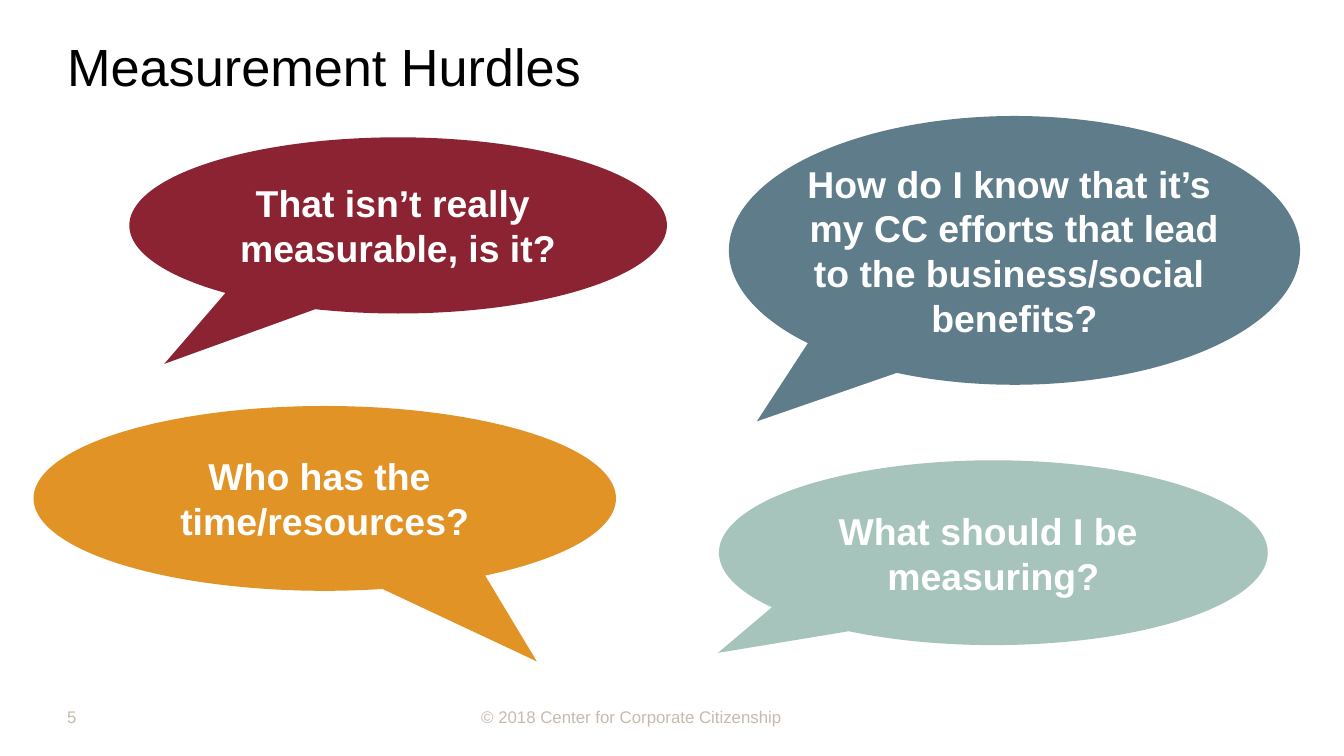
from pptx import Presentation
from pptx.dml.color import RGBColor
from pptx.enum.shapes import MSO_SHAPE
from pptx.enum.text import MSO_ANCHOR, MSO_AUTO_SIZE, PP_ALIGN
from pptx.util import Pt


def color(hex_value):
    return RGBColor.from_string(hex_value)


def write_text(shape, lines, alignment, hex_value, font_format, frame_format):
    text_frame = shape.text_frame
    for name, value in frame_format.items():
        setattr(text_frame, name, value)
    text_frame.text = "\n".join(lines)
    for paragraph in text_frame.paragraphs:
        paragraph.alignment = alignment
        for name, value in font_format.items():
            setattr(paragraph.font, name, value)
        paragraph.font.color.rgb = color(hex_value)


presentation = Presentation()
presentation.slide_width = Pt(720)
presentation.slide_height = Pt(405)
slide = presentation.slides.add_slide(presentation.slide_layouts[5])

plain_frame = {
    "margin_left": 0, "margin_top": 0, "margin_right": 0, "margin_bottom": 0,
    "vertical_anchor": MSO_ANCHOR.MIDDLE,
    "auto_size": MSO_AUTO_SIZE.NONE,
    "word_wrap": True,
}
bubble_frame = {
    "vertical_anchor": MSO_ANCHOR.MIDDLE,
    "auto_size": MSO_AUTO_SIZE.NONE,
    "word_wrap": False,
}
title_font = {"name": "Arial", "size": Pt(28), "bold": False}
footer_font = {"name": "Arial", "size": Pt(9)}
bubble_font = {"name": "Arial", "size": Pt(20), "bold": True}

# Title
title = slide.shapes.title
title.left, title.top, title.width, title.height = Pt(36), Pt(5.8), Pt(684), Pt(58.3)
write_text(title, ["Measurement Hurdles"], PP_ALIGN.LEFT, "000000",
           title_font, plain_frame)

# Footer: copyright line and slide number
for left, width, text in [
    (257.8, 164.2, "© 2018 Center for Corporate Citizenship"),
    (36, 167.8, "5"),
]:
    footer = slide.shapes.add_textbox(Pt(left), Pt(373), Pt(width), Pt(21.6))
    write_text(footer, [text], PP_ALIGN.LEFT, "C6BBAE", footer_font, plain_frame)

# Speech bubbles: position and size, tail tip, fill, lines
bubbles = [
    ((69.3, 73.6, 288, 94.4), (-0.435, 0.786), "8C2332",
     ["That isn’t really ", "measurable, is it?"]),
    ((390.5, 62.2, 306, 144), (-0.451, 0.636), "5E7C8A",
     ["How do I know that it’s ", "my CC efforts that lead",
      "to the business/social ", "benefits?"]),
    ((18, 217.5, 312, 99), (0.364, 0.882), "E29326",
     ["Who has the ", "time/resources?"]),
    ((385.2, 246.6, 294, 99), (-0.502, 0.542), "A6C4BC",
     ["What should I be ", "measuring?"]),
]
for box, tail_tip, fill, lines in bubbles:
    bubble = slide.shapes.add_shape(MSO_SHAPE.OVAL_CALLOUT, *map(Pt, box))
    bubble.adjustments[0], bubble.adjustments[1] = tail_tip
    bubble.shadow.inherit = False
    bubble.fill.solid()
    bubble.fill.fore_color.rgb = color(fill)
    bubble.line.fill.background()
    write_text(bubble, lines, PP_ALIGN.CENTER, "FFFFFF", bubble_font, bubble_frame)

presentation.save("out.pptx")
